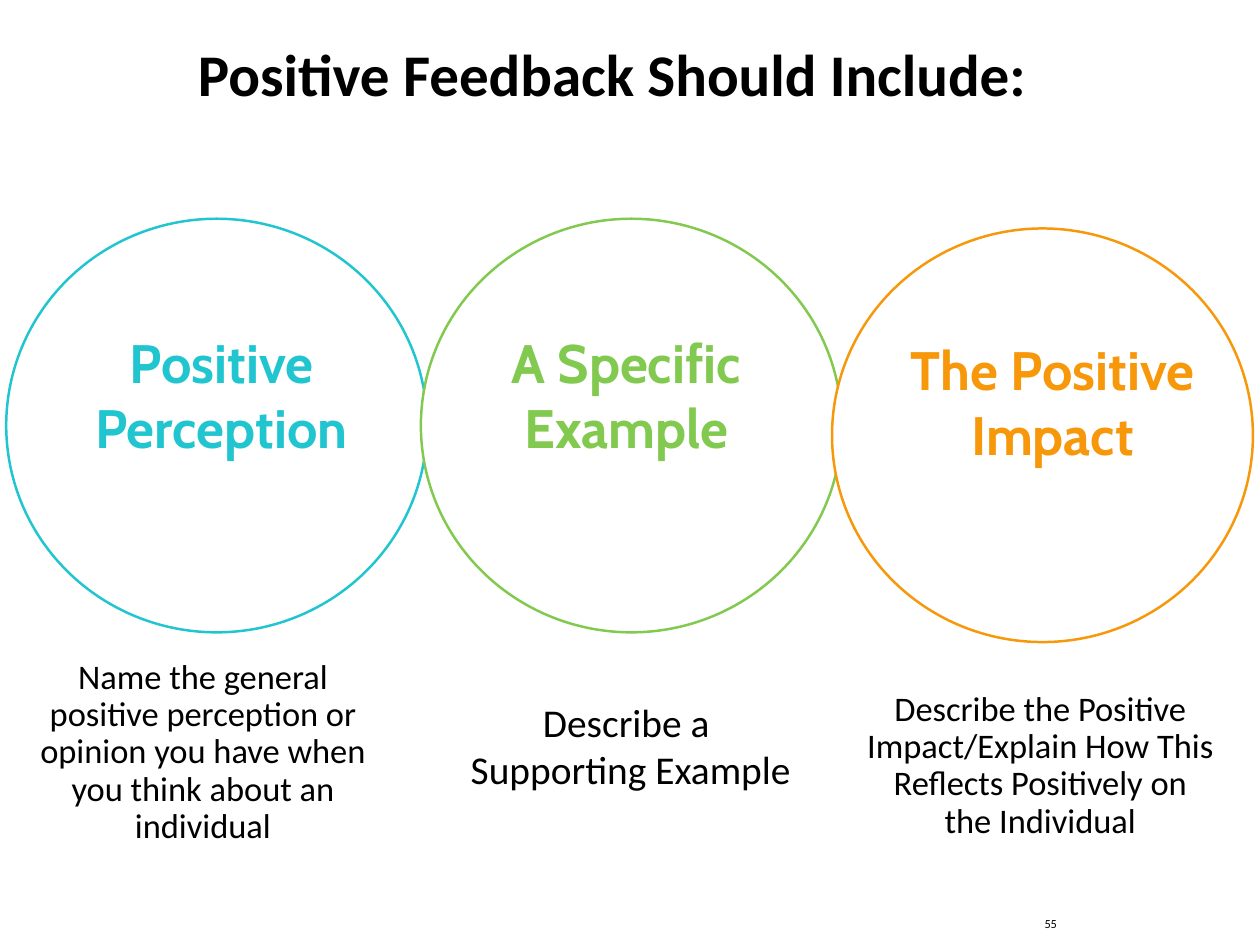
from dataclasses import dataclass

from pptx import Presentation
from pptx import util as u
from pptx.dml.color import RGBColor as Rgb
from pptx.enum import shapes, text


@dataclass(frozen=True)
class Theme:
    ink: str = "000000"
    paper: str = "FFFFFF"
    teal: str = "21C5CF"
    green: str = "82C950"
    amber: str = "F7980B"
    body: str = "Calibri"
    head: str = "Cabin"
    title: int = 48
    label: int = 44
    large: int = 32
    note: int = 28
    tiny: int = 10
    line: int = 2


THEME = Theme()
MID = text.MSO_ANCHOR.MIDDLE
TOP = text.MSO_ANCHOR.TOP
CENTER = text.PP_ALIGN.CENTER
LEFT = text.PP_ALIGN.LEFT


def write(slide, box, lines, size, font=THEME.body, color=THEME.ink, bold=False,
          align=CENTER, anchor=TOP, pad=0.1, space=1.0):
    """Add a text box whose lines share one paragraph, split by line breaks."""
    frame = slide.shapes.add_textbox(*map(u.Inches, box)).text_frame
    frame.word_wrap = True
    frame.vertical_anchor = anchor
    frame.margin_left = frame.margin_right = u.Inches(pad)
    frame.margin_top = frame.margin_bottom = u.Inches(pad / 2)
    para = frame.paragraphs[0]
    para.alignment = align
    para.line_spacing = space
    for i, line in enumerate(lines):
        if i:
            para.add_line_break()
        run = para.add_run()
        run.text = line
        run.font.name = font
        run.font.size = u.Pt(size)
        run.font.bold = bold
        run.font.color.rgb = Rgb.from_string(color)


def ring(slide, box, color):
    disc = slide.shapes.add_shape(shapes.MSO_SHAPE.OVAL, *map(u.Inches, box))
    disc.shadow.inherit = False
    disc.fill.solid()
    disc.fill.fore_color.rgb = Rgb.from_string(THEME.paper)
    disc.line.color.rgb = Rgb.from_string(color)
    disc.line.width = u.Pt(THEME.line)


def step(slide, box, label, color, shift):
    """Draw a ring with its label set at the given shift from the ring's corner."""
    left, top, _, _ = box
    ring(slide, box, color)
    write(slide, (left + shift[0], top + shift[1], 3.44, 1.58), [label],
          THEME.label, THEME.head, color, bold=True)


def note(slide, box, words):
    write(slide, box, [words], THEME.note, anchor=MID, pad=0.25, space=0.9)


def build(slide):
    write(slide, (0, 0.35, 13.82, 0.95), ["Positive Feedback Should Include:"],
          THEME.title, bold=True, anchor=MID)
    note(slide, (0, 7, 4.58, 3),
         "Name the general positive perception or opinion you have "
         "when you think about an individual")
    write(slide, (5.19, 7.83, 3.86, 1.18), ["Describe a ", "Supporting Example"],
          THEME.large)
    note(slide, (9.53, 7.25, 4.42, 2.8),
         "Describe the Positive Impact/Explain How This Reflects "
         "Positively on the Individual")
    steps = (
        (0.07, 2.47, "Positive Perception", THEME.teal, (0.71, 1.2)),
        (4.75, 2.47, "A Specific Example", THEME.green, (0.6, 1.2)),
        (9.39, 2.58, "The Positive Impact", THEME.amber, (0.77, 1.17)),
    )
    for left, top, label, color, shift in steps:
        step(slide, (left, top, 4.75, 4.67), label, color, shift)
    write(slide, (11.69, 10.3, 2.4, 0.3), ["55"], THEME.tiny, align=LEFT)


def main():
    deck = Presentation()
    deck.slide_width = u.Inches(14.22)
    deck.slide_height = u.Inches(10.67)
    build(deck.slides.add_slide(deck.slide_layouts[6]))
    deck.save("out.pptx")


if __name__ == "__main__":
    main()
